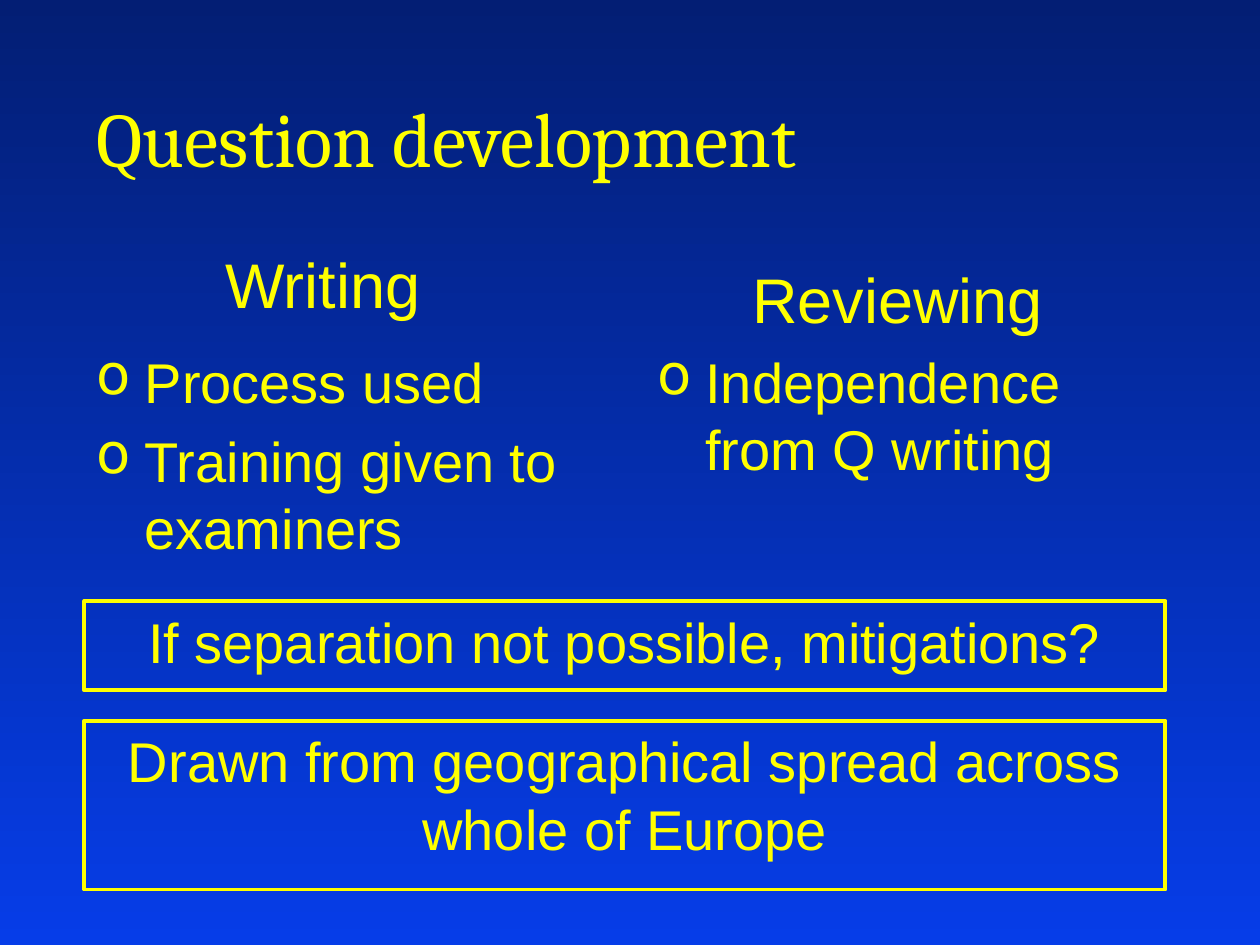
import pptx
import pptx.dml.color
import pptx.enum.shapes
import pptx.enum.text
import pptx.oxml
import pptx.oxml.ns
import pptx.util

RGBColor = pptx.dml.color.RGBColor
PP_ALIGN = pptx.enum.text.PP_ALIGN
MSO_ANCHOR = pptx.enum.text.MSO_ANCHOR

YELLOW = RGBColor(0xFF, 0xFF, 0x00)
BULLET_YELLOW = RGBColor(0xFA, 0xFD, 0x00)
NAVY = RGBColor(0x03, 0x1E, 0x74)
BLUE = RGBColor(0x06, 0x3D, 0xE8)
NS = pptx.oxml.ns.nsdecls("a")
BULLET_XML = (
    f'<a:buClr {NS}><a:srgbClr val="{BULLET_YELLOW}"/></a:buClr>',
    f'<a:buChar {NS} char="o"/>',
)


class Deck:
    """Slide style and drawing methods, with lengths in percent of the slide's size."""

    def __init__(self):
        self.prs = pptx.Presentation()
        self.prs.slide_width = pptx.util.Inches(10)
        self.prs.slide_height = pptx.util.Inches(7.5)
        self.s = self.prs.slides.add_slide(self.prs.slide_layouts[6])

    def area(self, left, top, width, height):
        w, h = self.prs.slide_width, self.prs.slide_height
        return [int(share * full / 100)
                for share, full in zip((left, top, width, height), (w, h, w, h))]

    def background(self, top_color, bottom_color):
        fill = self.s.background.fill
        fill.gradient()
        fill.gradient_angle = 270
        for stop, position, color in zip(fill.gradient_stops, (0, 1), (top_color, bottom_color)):
            stop.position = position
            stop.color.rgb = color

    def set_text(self, sp, lines, size, font="Arial", align=PP_ALIGN.CENTER,
                 anchor=MSO_ANCHOR.TOP, bullets=False):
        tf = sp.text_frame
        tf.word_wrap = True
        tf.vertical_anchor = anchor
        tf.text = "\n".join(lines)
        for i, p in enumerate(tf.paragraphs):
            p.alignment = align
            if i:
                p.space_before = pptx.util.Pt(size * 0.2)
            if bullets:
                pPr = p._p.get_or_add_pPr()
                indent = pptx.util.Inches(0.38)
                pPr.set("marL", str(indent))
                pPr.set("indent", str(-indent))
                for xml in BULLET_XML:
                    pPr.append(pptx.oxml.parse_xml(xml))
            for r in p.runs:
                r.font.name = font
                r.font.size = pptx.util.Pt(size)
                r.font.color.rgb = YELLOW

    def text(self, area, lines, size, **style):
        self.set_text(self.s.shapes.add_textbox(*self.area(*area)), lines, size, **style)

    def bullets(self, area, lines):
        self.text(area, lines, 32, align=PP_ALIGN.LEFT, bullets=True)

    def frame(self, area, line):
        sp = self.s.shapes.add_shape(
            pptx.enum.shapes.MSO_SHAPE.RECTANGLE, *self.area(*area))
        sp.shadow.inherit = False
        sp.fill.background()
        sp.line.color.rgb = YELLOW
        sp.line.width = pptx.util.Pt(2.25)
        self.set_text(sp, [line], 32)


def main():
    deck = Deck()
    deck.background(NAVY, BLUE)
    deck.text((6.7, 3.33, 73.3, 16.67), ["Question development"], 44, font="Cambria",
              align=PP_ALIGN.LEFT, anchor=MSO_ANCHOR.BOTTOM)
    deck.bullets((6.7, 36.13, 42.1, 27.5), ["Process used", "Training given to examiners"])
    deck.bullets((51.2, 36.13, 42.1, 25), ["Independence from Q writing"])
    deck.text((4.5, 25.33, 42.3, 12), ["Writing"], 36)
    deck.text((50, 26.93, 42.5, 12), ["Reviewing"], 36)
    deck.frame((6.7, 76.27, 85.8, 17.87), "Drawn from geographical spread across whole of Europe")
    deck.frame((6.7, 63.6, 85.8, 9.47), "If separation not possible, mitigations?")
    deck.prs.save("out.pptx")


if __name__ == "__main__":
    main()
